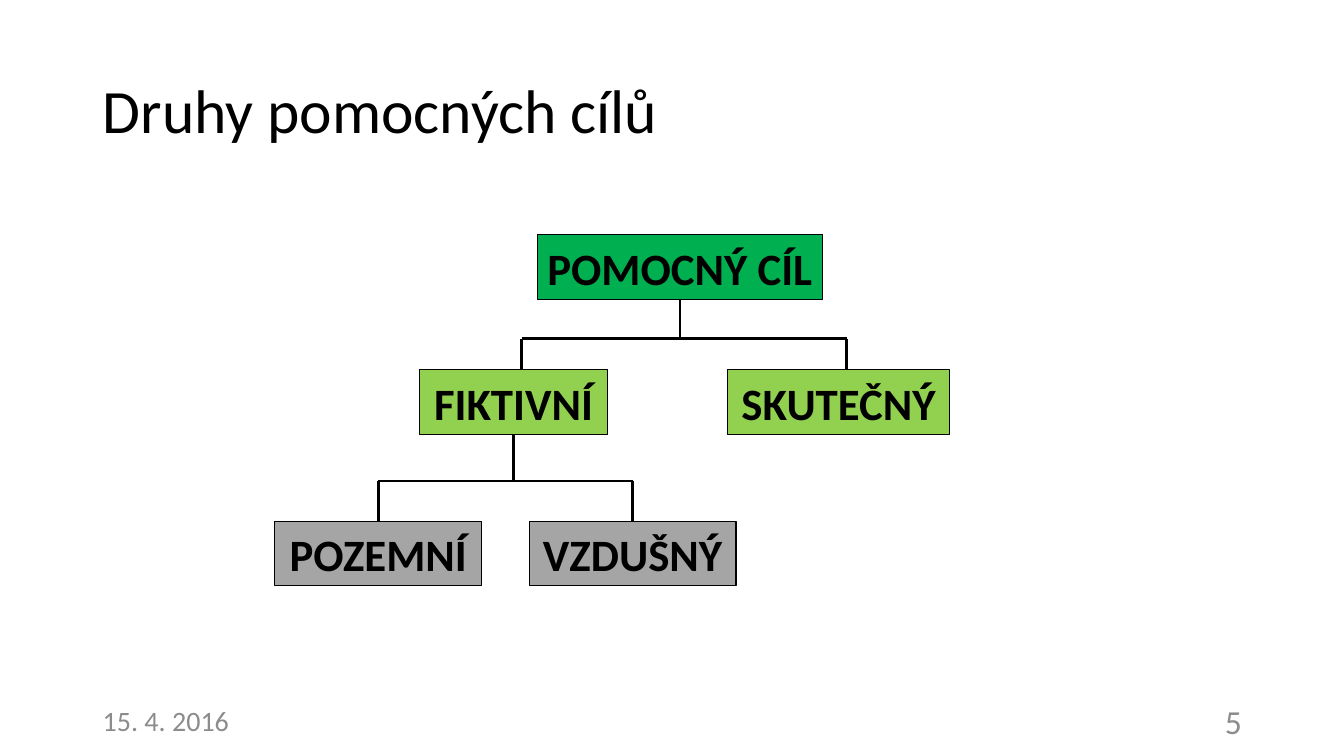
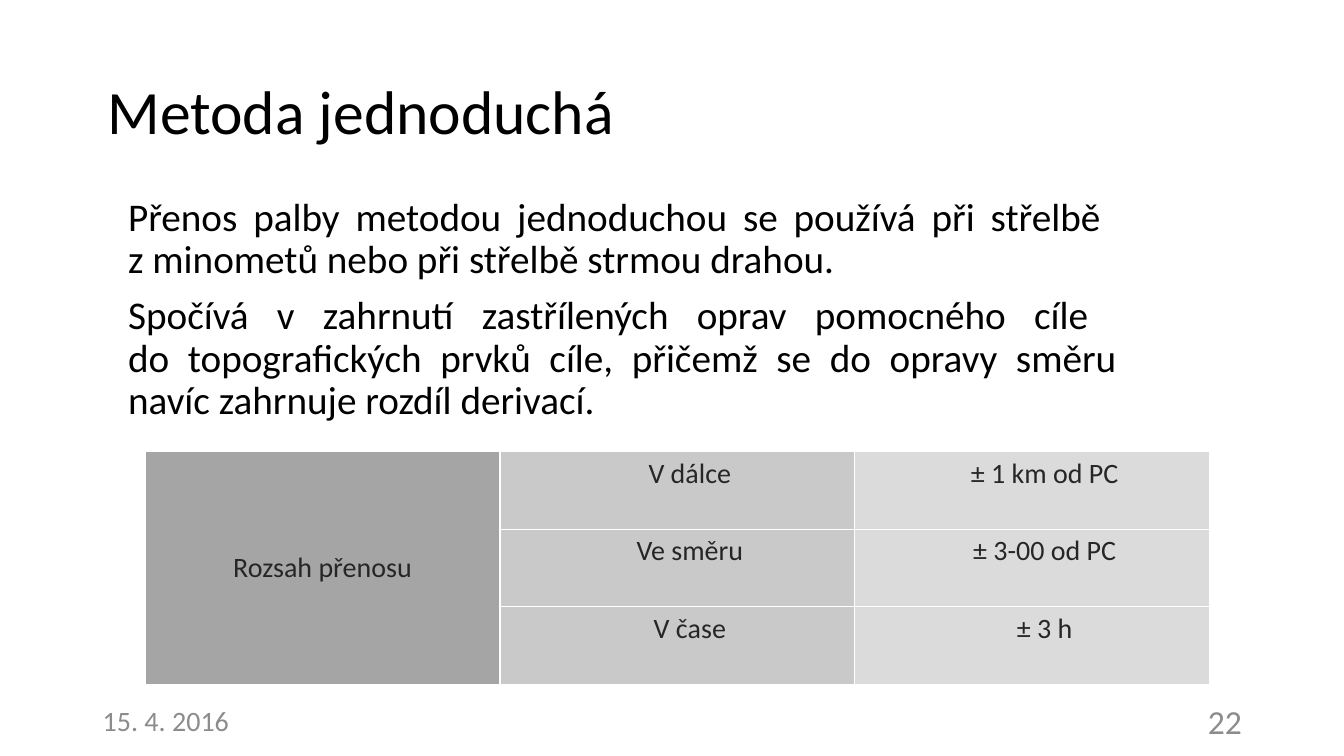
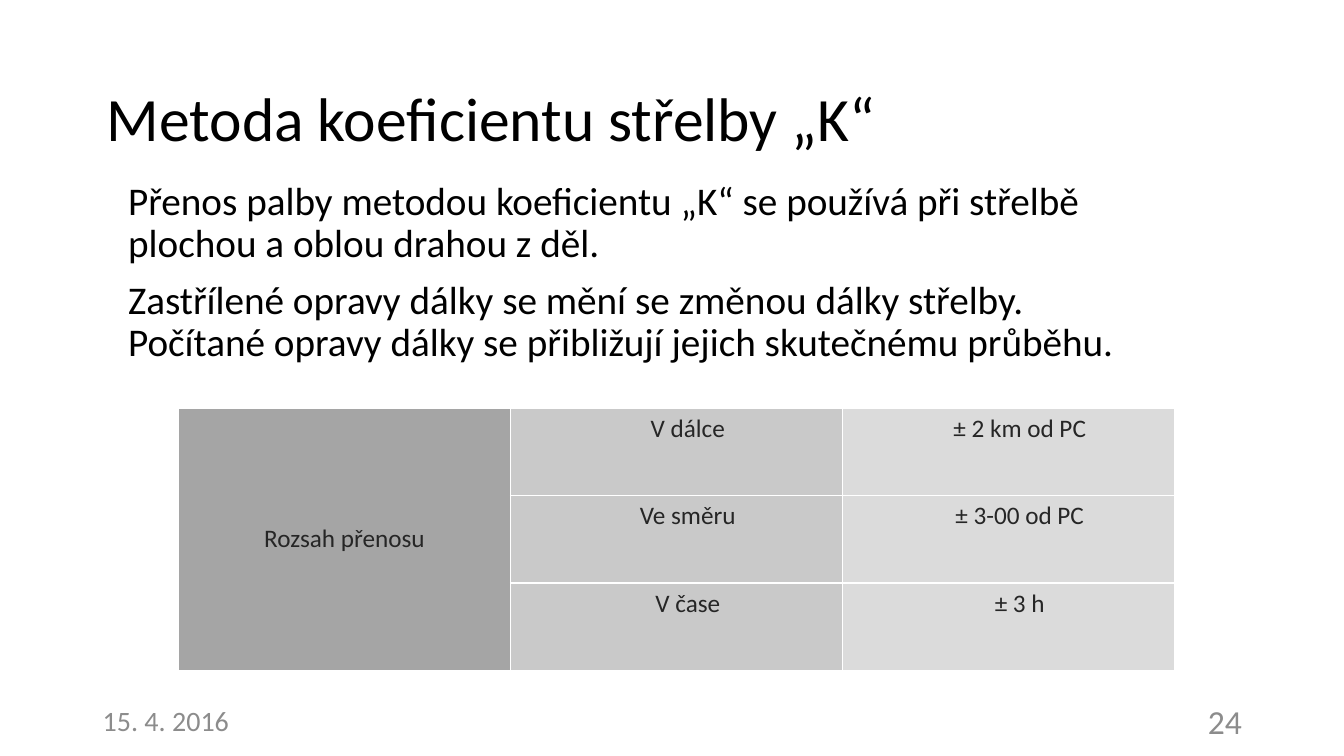
import dataclasses

import lxml.etree
import pptx
import pptx.dml.color
import pptx.enum.shapes
import pptx.enum.text
import pptx.oxml.ns
import pptx.util

Cm = pptx.util.Cm
Pt = pptx.util.Pt
ALIGN = pptx.enum.text.PP_ALIGN
ANCHOR = pptx.enum.text.MSO_ANCHOR


@dataclasses.dataclass(frozen=True)
class Theme:
    font: str = "Calibri"
    ink: str = "000000"
    muted: str = "8C8C8C"
    cell_ink: str = "262626"
    border: str = "FFFFFF"
    root: str = "00B050"
    branch: str = "92D050"
    leaf: str = "A5A5A5"
    columns: tuple = ("A5A5A5", "C9C9C9", "DBDBDB")
    title_size: int = 44
    node_size: int = 32
    body_size: int = 28
    number_size: int = 24
    date_size: int = 20
    table_size: int = 20
    small_table_size: int = 18


def rgb(value):
    return pptx.dml.color.RGBColor.from_string(value)


def assign(target, values):
    for name, value in values.items():
        setattr(target, name, value)


class Slides:
    def __init__(self, theme):
        self.theme = theme
        self.deck = pptx.Presentation()
        assign(self.deck, {"slide_width": Cm(33.87), "slide_height": Cm(19.05)})
        self.page = None

    def start(self, title, left, top, number):
        """Add a page with its title, date and page number."""
        theme = self.theme
        self.page = self.deck.slides.add_slide(self.deck.slide_layouts[6])
        self.text((left, top, 29.21, 3.68), [title], theme.title_size, line_spacing=0.9)
        self.text((2.34, 17.65, 7.62, 1.02), ["15. 4. 2016"], theme.date_size, theme.muted)
        self.text((23.93, 17.65, 7.62, 1.02), [number], theme.number_size, theme.muted,
                  alignment=ALIGN.RIGHT)

    def fill_text(self, frame, lines, size, color, bold=False, **layout):
        for index, line in enumerate(lines):
            para = frame.add_paragraph() if index else frame.paragraphs[0]
            para.text = line
            assign(para, layout)
            for span in para.runs:
                assign(span.font, {"name": self.theme.font, "size": Pt(size), "bold": bold})
                span.font.color.rgb = rgb(color)

    def text(self, area, lines, size, color=None, anchor=ANCHOR.MIDDLE, **layout):
        frame = self.page.shapes.add_textbox(*map(Cm, area)).text_frame
        assign(frame, {"word_wrap": True, "vertical_anchor": anchor})
        self.fill_text(frame, lines, size, color or self.theme.ink, **layout)
        return frame

    def body(self, top, lines, alignment):
        frame = self.text((2.34, top, 26.05, 8.8), lines, self.theme.body_size,
                          anchor=ANCHOR.TOP, alignment=alignment,
                          line_spacing=0.9, space_before=Pt(10))
        frame.margin_left = Cm(0.89)

    def node(self, label, left, top, width, fill):
        box = self.page.shapes.add_shape(pptx.enum.shapes.MSO_SHAPE.RECTANGLE,
                                         Cm(left), Cm(top), Cm(width), Cm(1.63))
        box.shadow.inherit = False
        box.fill.solid()
        box.fill.fore_color.rgb = rgb(fill)
        box.line.color.rgb = rgb(self.theme.ink)
        box.line.width = Pt(0.75)
        box.text_frame.word_wrap = False
        self.fill_text(box.text_frame, [label], self.theme.node_size, self.theme.ink,
                       bold=True, alignment=ALIGN.CENTER)
        return box

    def line(self, x1, y1, x2, y2):
        link = self.page.shapes.add_connector(pptx.enum.shapes.MSO_CONNECTOR.STRAIGHT,
                                              x1, y1, x2, y2)
        link.line.color.rgb = rgb(self.theme.ink)
        link.line.width = Pt(2)
        lxml.etree.SubElement(link._element.spPr, pptx.oxml.ns.qn("a:effectLst"))
        return link

    def branch(self, parent, children, rail, shift=0):
        """Link parent to children over a rail; shift moves the drops off the middles."""
        rail = Cm(rail)
        middle = parent.left + parent.width // 2
        stem = self.line(middle, parent.top + parent.height, middle, rail)
        stem.begin_connect(parent, 2)
        drops = [child.left + child.width // 2 + Cm(shift) for child in children]
        self.line(drops[0], rail, drops[-1], rail)
        for child, x in zip(children, drops):
            drop = self.line(x, rail, x, child.top)
            if not shift:
                drop.end_connect(child, 0)

    def cell(self, cell, label, size, fill, anchor, indent):
        cell.fill.solid()
        cell.fill.fore_color.rgb = rgb(fill)
        assign(cell, {"vertical_anchor": anchor, "margin_left": Cm(0.25) + indent})
        self.fill_text(cell.text_frame, [label], size, self.theme.cell_ink,
                       alignment=ALIGN.CENTER)
        properties = cell._tc.get_or_add_tcPr()
        for position, side in enumerate(("lnL", "lnR", "lnT", "lnB")):
            edge = lxml.etree.Element(pptx.oxml.ns.qn("a:" + side), w=str(Pt(1)))
            solid = lxml.etree.SubElement(edge, pptx.oxml.ns.qn("a:solidFill"))
            lxml.etree.SubElement(solid, pptx.oxml.ns.qn("a:srgbClr"), val=self.theme.border)
            properties.insert(position, edge)

    def range_table(self, area, distance, size):
        """Draw the transfer limits, with one heading cell beside all rows."""
        rows = [("V dálce", distance), ("Ve směru", "± 3-00 od PC"), ("V čase", "± 3 h")]
        table = self.page.shapes.add_table(3, 3, *map(Cm, area)).table
        assign(table, {"first_row": False, "horz_banding": False})
        table.cell(0, 0).merge(table.cell(2, 0))
        for r, row in enumerate(rows):
            heading = "" if r else "Rozsah přenosu"
            for c, label in enumerate((heading, *row)):
                self.cell(table.cell(r, c), label, size, self.theme.columns[c],
                          ANCHOR.TOP if c else ANCHOR.MIDDLE, Pt(0.9 * size) if c else 0)


def main():
    theme = Theme()
    slides = Slides(theme)

    slides.start("Druhy pomocných cílů", 2.34, 1.02, "5")
    target = slides.node("POMOCNÝ CÍL", 13.54, 5.92, 7.19, theme.root)
    fictive = slides.node("FIKTIVNÍ", 10.57, 9.32, 4.75, theme.branch)
    real = slides.node("SKUTEČNÝ", 18.34, 9.32, 5.59, theme.branch)
    ground = slides.node("POZEMNÍ", 6.93, 13.13, 5.21, theme.leaf)
    aerial = slides.node("VZDUŠNÝ", 13.34, 13.13, 5.21, theme.leaf)
    slides.branch(target, [fictive, real], 8.53, shift=0.2)
    slides.branch(fictive, [ground, aerial], 12.12)

    slides.start("Metoda jednoduchá", 2.46, 1.04, "22")
    slides.body(4.85, [
        "Přenos palby metodou jednoduchou se používá při střelbě \v"
        "z minometů nebo při střelbě strmou drahou.",
        "Spočívá v zahrnutí zastřílených oprav pomocného cíle \v"
        "do topografických prvků cíle, přičemž se do opravy směru "
        "navíc zahrnuje rozdíl derivací.",
    ], ALIGN.JUSTIFY)
    slides.range_table((3.66, 11.38, 26.82, 5.87), "± 1 km od PC", theme.table_size)

    slides.start("Metoda koeficientu střelby „K“", 2.44, 1.22, "24")
    slides.body(4.45, [
        "Přenos palby metodou koeficientu „K“ se používá při střelbě "
        "plochou a oblou drahou z děl.",
        "Zastřílené opravy dálky se mění se změnou dálky střelby. "
        "Počítané opravy dálky se přibližují jejich skutečnému průběhu.",
    ], ALIGN.LEFT)
    slides.range_table((4.5, 10.29, 25.1, 6.6), "± 2 km od PC", theme.small_table_size)

    slides.deck.save("out.pptx")


if __name__ == "__main__":
    main()
